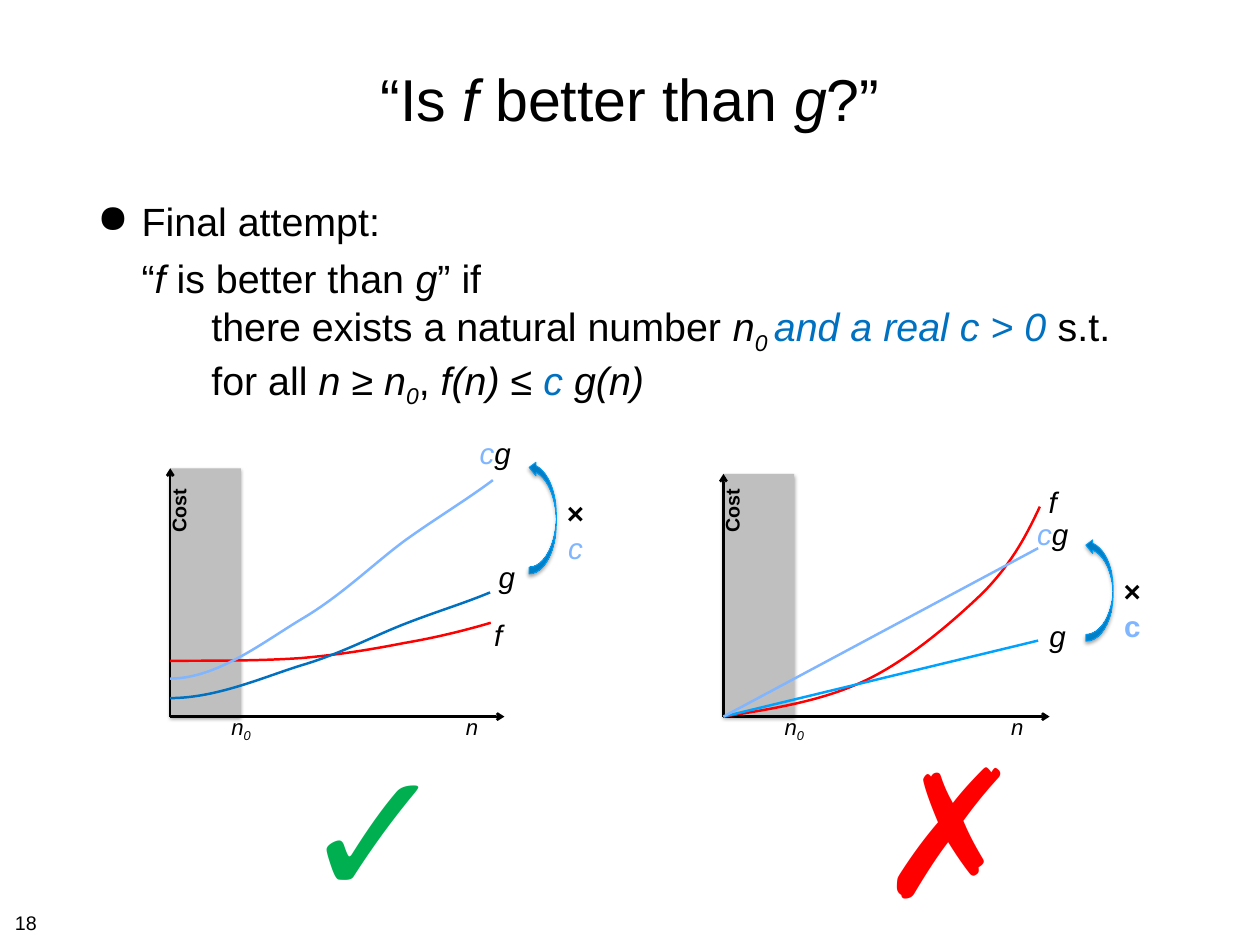
from lxml import etree
from pptx import Presentation
from pptx import util as u
from pptx.dml.color import RGBColor
from pptx.enum import shapes, text
from pptx.oxml.ns import qn

BLACK = RGBColor(0x00, 0x00, 0x00)
GREY = RGBColor(0xBF, 0xBF, 0xBF)
RED = RGBColor(0xFF, 0x00, 0x00)
GREEN = RGBColor(0x00, 0xB0, 0x50)
BLUE = RGBColor(0x00, 0x70, 0xC0)
SKY = RGBColor(0x00, 0xA2, 0xFF)
PALE_BLUE = RGBColor(0x80, 0xB5, 0xFF)
ARROW_DARK = RGBColor(0x00, 0x79, 0xBE)
ARROW_LIGHT = RGBColor(0x00, 0x9E, 0xF8)

ITALIC = {"italic": True}
BOLD = {"bold": True}
SUB = {"italic": True, "baseline": -25000}
BLUE_ITALIC = {"italic": True, "color": BLUE}
PALE_ITALIC = {"italic": True, "color": PALE_BLUE}
N, F, G = [("n", ITALIC)], [("f", ITALIC)], [("g", ITALIC)]
N0 = N + [("0", SUB)]
CG = [("c", PALE_ITALIC)] + G


def add_text(slide, box, lines, size, wrap=False, margin=0.15,
             align=text.PP_ALIGN.LEFT, anchor=text.MSO_ANCHOR.TOP):
    """Each line is a list of (words, format) runs; box is left, top, width, height in cm."""
    textbox = slide.shapes.add_textbox(*map(u.Cm, box))
    frame = textbox.text_frame
    frame.word_wrap = wrap
    frame.vertical_anchor = anchor
    for side in ("left", "top", "right", "bottom"):
        setattr(frame, f"margin_{side}", u.Cm(margin))
    for i, line in enumerate(lines):
        paragraph = frame.paragraphs[0] if i == 0 else frame.add_paragraph()
        paragraph.alignment = align
        for words, style in line:
            run = paragraph.add_run()
            run.text = words
            style = {"name": "Arial", "size": u.Pt(size), "color": BLACK, **style}
            run.font.color.rgb = style.pop("color")
            baseline = style.pop("baseline", 0)
            if baseline:
                run.font._element.set("baseline", str(baseline))
            for key, value in style.items():
                setattr(run.font, key, value)
    return textbox


def add_label(slide, center, top, lines, size):
    return add_text(slide, (center - 1, top, 2, 1.3), lines, size,
                    margin=0.13, align=text.PP_ALIGN.CENTER)


def soft_shadow(shape):
    shape.shadow.inherit = False
    effects = shape._element.spPr.find(qn("a:effectLst"))
    shadow = etree.SubElement(effects, qn("a:outerShdw"), blurRad="40000",
                              dist="23000", dir="5400000", rotWithShape="0")
    color = etree.SubElement(shadow, qn("a:srgbClr"), val="000000")
    etree.SubElement(color, qn("a:alpha"), val="35000")


def add_line(slide, start, end, color, arrow=False):
    line = slide.shapes.add_connector(shapes.MSO_CONNECTOR.STRAIGHT,
                                      *map(u.Cm, (*start, *end)))
    line.line.color.rgb = color
    line.line.width = u.Pt(2)
    etree.SubElement(line._element.spPr, qn("a:effectLst"))
    if arrow:
        etree.SubElement(line.line._get_or_add_ln(), qn("a:tailEnd"), type="arrow")


def add_curve(slide, points, color):
    """Draw a chain of cubic Béziers: a start, then three points for each piece."""
    (x, y), *rest = [(u.Cm(px), u.Cm(py)) for px, py in points]
    builder = slide.shapes.build_freeform(x, y)
    builder.add_line_segments(rest, close=False)
    curve = builder.convert_to_shape()
    outline = curve._element.spPr.find(".//" + qn("a:path"))
    segments = outline.findall(qn("a:lnTo"))
    for i in range(0, len(segments), 3):
        bezier = etree.SubElement(outline, qn("a:cubicBezTo"))
        for segment in segments[i:i + 3]:
            bezier.append(segment[0])
            outline.remove(segment)
    curve.fill.background()
    curve.line.color.rgb = color
    curve.line.width = u.Pt(2)
    curve.shadow.inherit = False


def add_scale_arrow(slide, box):
    arrow = slide.shapes.add_shape(shapes.MSO_SHAPE.CURVED_LEFT_ARROW, *map(u.Cm, box))
    arrow._element.spPr.find(qn("a:xfrm")).set("flipV", "1")
    arrow.fill.gradient()
    arrow.fill.gradient_angle = 90
    stops = zip(arrow.fill.gradient_stops, (ARROW_DARK, ARROW_LIGHT), (0, 0.8))
    for stop, color, position in stops:
        stop.color.rgb = color
        stop.position = position
    arrow.line.color.rgb = ARROW_LIGHT
    arrow.line.width = u.Pt(0.75)
    soft_shadow(arrow)


def add_heading(slide, box):
    runs = [("“Is ", {}), *F, (" better than ", {}), *G, ("?”", {})]
    add_text(slide, box, [runs], 48, wrap=True,
             align=text.PP_ALIGN.CENTER, anchor=text.MSO_ANCHOR.MIDDLE)


def add_definition(slide, box):
    left, top, width, height = box
    claim = [("“", {}), *F, (" is better than ", {}), *G, ("” if", {})]
    intro = add_text(slide, box, [[("Final attempt:", {})], claim], 32, wrap=True)
    indent = u.Cm(1.27)
    for paragraph, first in zip(intro.text_frame.paragraphs, (-indent, 0)):
        paragraph.space_before = u.Pt(8)
        properties = paragraph._p.get_or_add_pPr()
        properties.set("marL", str(indent))
        properties.set("indent", str(first))
        if first:
            etree.SubElement(properties, qn("a:buChar"), char="●")
    exists = [("there exists a natural number ", {}), *N0, (" ", SUB),
              ("and a real c > 0 ", BLUE_ITALIC), ("s.t.", {})]
    for_all = [("for all ", {}), ("n ≥ n", ITALIC), ("0", SUB), (", ", {}),
               ("f(n) ≤ ", ITALIC), ("c ", BLUE_ITALIC), ("g(n)", ITALIC)]
    add_text(slide, (left + 3.27, top + 3, width - 1, 3), [exists, for_all], 32)


def add_plot(slide, box, curves, labels, factor, arrow, verdict):
    """Positions inside the plot are measured right and up from its origin."""
    left, top, width, height = box
    base = top + height

    def at(x, y):
        return left + x, base - y

    band = slide.shapes.add_shape(shapes.MSO_SHAPE.RECTANGLE,
                                  *map(u.Cm, (left, top, 2.03, height)))
    band.fill.solid()
    band.fill.fore_color.rgb = GREY
    band.line.fill.background()
    soft_shadow(band)
    for end in ((width, 0), (0, height)):
        add_line(slide, at(0, 0), at(*end), BLACK, arrow=True)
    for color, points in curves:
        placed = [at(*point) for point in points]
        if len(placed) == 2:
            add_line(slide, *placed, color)
        else:
            add_curve(slide, placed, color)
    for runs, x, y in labels:
        add_label(slide, *at(x, y), [runs], 24)
    for runs, x in ((N0, 2.03), (N, width - 0.93)):
        add_label(slide, *at(x, 0.23), [runs], 18)
    cost = add_label(slide, *at(0.37, 6.5), [[("Cost", BOLD)]], 16)
    cost.height = u.Cm(1.2)
    cost.rotation = 270

    arrow_x, arrow_y, arrow_height = arrow
    add_scale_arrow(slide, (*at(arrow_x, arrow_y), 0.78, arrow_height))
    add_label(slide, *at(arrow_x + 1.33, arrow_y - 0.85),
              [[("×", BOLD)], [("c", factor)]], 24)
    mark, color, mark_x = verdict
    add_label(slide, *at(mark_x, 0.03), [[(mark, {"bold": True, "color": color})]], 144)


def main():
    deck = Presentation()
    deck.slide_width, deck.slide_height = u.Cm(36.12), u.Cm(27.1)
    slide = deck.slides.add_slide(deck.slide_layouts[6])
    add_heading(slide, (2.64, 0.71, 30.84, 4.17))
    add_definition(slide, (2.64, 5.51, 30.84, 5))
    add_plot(
        slide, (4.88, 13.43, 9.58, 7.12),
        curves=[
            (RED, [(0, 1.6), (1.32, 1.6), (2.67, 1.6), (3.78, 1.68), (4.9, 1.78),
                   (5.79, 1.93), (6.71, 2.11), (7.59, 2.26), (8.41, 2.46), (9.19, 2.69)]),
            (BLUE, [(0, 0.53), (1.32, 0.53), (2.64, 1.12), (3.76, 1.47), (4.88, 1.8),
                    (5.79, 2.29), (6.68, 2.64), (7.59, 3), (8.38, 3.23), (9.17, 3.56)]),
            (PALE_BLUE, [(0, 1.09), (1.37, 1.09), (2.72, 2.18), (3.84, 2.84), (4.95, 3.51),
                         (5.84, 4.39), (6.73, 5.05), (7.65, 5.71), (8.43, 6.17), (9.25, 6.78)]),
        ],
        labels=[(CG, 9.32, 8.2), (G, 9.65, 4.65), (F, 9.4, 3)],
        factor=PALE_ITALIC, arrow=(10.29, 7.34, 3.25), verdict=("✓", GREEN, 4.61))
    add_plot(
        slide, (20.74, 13.59, 9.35, 6.96),
        curves=[
            (RED, [(0, 0), (1.47, 0.23), (2.9, 0.46), (4.14, 1.07), (5.38, 1.68),
                   (6.63, 2.77), (7.47, 3.58), (8.28, 4.42), (8.69, 5.21), (9.07, 6.02)]),
            (SKY, [(0, 0), (9.02, 2.18)]),
            (PALE_BLUE, [(0, 0), (9.02, 4.83)]),
        ],
        labels=[(F, 9.44, 6.81), (CG, 9.44, 5.89), (G, 9.58, 2.95)],
        factor={"bold": True, "color": PALE_BLUE}, arrow=(10.39, 5.11, 2.95),
        verdict=("✗", RED, 5.27))
    add_text(slide, (0.28, 25.98, 0.94, 0.89), [[("18", {})]], 16)
    deck.save("out.pptx")


if __name__ == "__main__":
    main()
